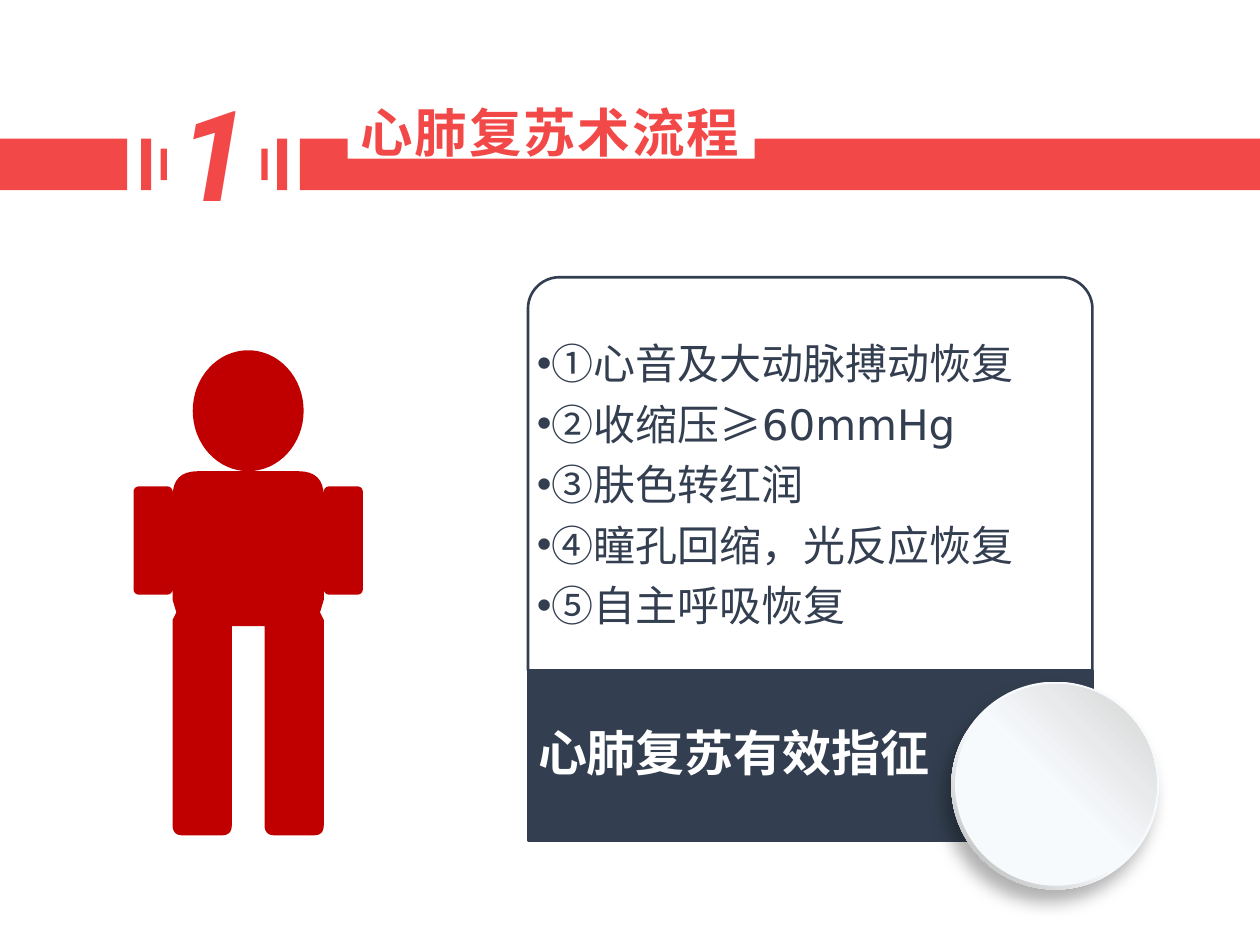
from math import cos, dist, pi, sin

from lxml.etree import SubElement
from pptx import Presentation
from pptx.dml.color import RGBColor
from pptx.enum.shapes import MSO_SHAPE as SHAPE
from pptx.enum.text import MSO_ANCHOR as ANCHOR, MSO_AUTO_SIZE as AUTO_SIZE, PP_ALIGN as ALIGN
from pptx.oxml import parse_xml
from pptx.oxml.ns import nsdecls, qn
from pptx.util import Inches, Pt

RED = RGBColor(0xF2, 0x48, 0x48)
DARK_RED = RGBColor(0xC0, 0x00, 0x00)
NAVY = RGBColor(0x33, 0x3F, 0x50)
WHITE = RGBColor(0xFF, 0xFF, 0xFF)

WIDTH, HEIGHT = 10, 7.5
BAND_TOP, BAND_HEIGHT = 1.1, 0.41
NUMBER_CENTER = 1.7
CARD_LEFT, CARD_TOP, CARD_WIDTH = 4.19, 2.2, 4.48
LIST_HEIGHT, LABEL_HEIGHT = 3.12, 1.35

SIGNS = [
    "①心音及大动脉搏动恢复",
    "②收缩压≥60mmHg",
    "③肤色转红润",
    "④瞳孔回缩，光反应恢复",
    "⑤自主呼吸恢复",
]

# Right half of the body: distance from the axis, height on the slide, corner radius
FIGURE_AXIS = 1.97
HALF_BODY = [
    (0.6, 3.74, 0.2), (0.6, 3.94, 0), (0.6, 3.86, 0.05),
    (0.91, 3.86, 0.05), (0.91, 4.72, 0.05), (0.6, 4.72, 0.05),
    (0.6, 4.66, 0), (0.6, 4.76, 0), (0.57, 4.86, 0), (0.6, 4.92, 0),
    (0.6, 6.63, 0.08), (0.13, 6.63, 0.08), (0.13, 4.97, 0),
]


def place(shape, left, top, width, height):
    shape.left, shape.top = Inches(left), Inches(top)
    shape.width, shape.height = Inches(width), Inches(height)


def add_shape(slide, kind, box, color=None, line=None):
    shape = slide.shapes.add_shape(kind, *map(Inches, box))
    shape.shadow.inherit = False
    if color is not None:
        shape.fill.solid()
        shape.fill.fore_color.rgb = color
    if line is None:
        shape.line.fill.background()
    else:
        shape.line.color.rgb = line
        shape.line.width = Pt(1.5)
    return shape


def set_frame(shape, anchor, insets):
    frame = shape.text_frame
    frame.word_wrap = True
    frame.auto_size = AUTO_SIZE.NONE
    frame.vertical_anchor = anchor
    (frame.margin_left, frame.margin_top,
     frame.margin_right, frame.margin_bottom) = map(Inches, insets)
    return frame


def set_font(paragraph, size, color, name="DejaVu Sans", bold=False, italic=False):
    paragraph.alignment = ALIGN.LEFT
    font = paragraph.font
    font.name, font.size = name, Pt(size)
    font.bold, font.italic = bold, italic
    font.color.rgb = color


def bring_to_front(slide, shape):
    slide.shapes._spTree.append(shape._element)


def add_banner(slide):
    add_shape(slide, SHAPE.RECTANGLE, (0, BAND_TOP, 1.01, BAND_HEIGHT), RED)
    add_shape(slide, SHAPE.RECTANGLE, (2.38, BAND_TOP, WIDTH - 2.38, BAND_HEIGHT), RED)
    add_shape(slide, SHAPE.RECTANGLE, (2.76, 0.63, 3.23, 0.63), WHITE)
    for offset, width, height in ((0.54, 0.08, BAND_HEIGHT), (0.4, 0.05, 0.25)):
        for side in (-1, 1):
            left = NUMBER_CENTER + side * offset - width / 2
            top = BAND_TOP + (BAND_HEIGHT - height) / 2
            add_shape(slide, SHAPE.RECTANGLE, (left, top, width, height), RED)

    number = slide.shapes.add_textbox(*map(Inches, (1.33, 0.55, 0.79, 1.31)))
    number.text_frame.word_wrap = False
    number.text_frame.text = "1"
    set_font(number.text_frame.paragraphs[0], 72, RED, "Roboto", bold=True, italic=True)


def add_title(slide, text):
    title = slide.shapes.title
    place(title, 2.76, 0.74, 3.23, 0.61)
    frame = set_frame(title, ANCHOR.TOP, (0.1, 0.05, 0, 0.05))
    frame.text = text
    paragraph = frame.paragraphs[0]
    set_font(paragraph, 30, RED, bold=True)
    paragraph.runs[0]._r.get_or_add_rPr().set("spc", "110")
    bring_to_front(slide, title)


def add_list_card(slide, items):
    box = (CARD_LEFT, CARD_TOP, CARD_WIDTH, LIST_HEIGHT)
    card = add_shape(slide, SHAPE.ROUND_2_SAME_RECTANGLE, box, WHITE, NAVY)
    card.adjustments[0] = 0.08

    body = slide.placeholders[1]
    place(body, *box)
    frame = set_frame(body, ANCHOR.MIDDLE, (0.07, 0.1, 0.07, 0.02))
    frame.text = "\n".join(items)
    for paragraph in frame.paragraphs:
        properties = paragraph._p.get_or_add_pPr()
        properties.set("marL", str(Inches(0.12)))
        properties.set("indent", str(-Inches(0.12)))
        SubElement(properties, qn("a:buChar")).set("char", "•")
        paragraph.level = 1
        paragraph.line_spacing = 1.2
        paragraph.space_before = Pt(0)
        set_font(paragraph, 24, NAVY)
    bring_to_front(slide, body)


def add_card_label(slide, text):
    box = (CARD_LEFT, CARD_TOP + LIST_HEIGHT, CARD_WIDTH, LABEL_HEIGHT)
    label = add_shape(slide, SHAPE.RECTANGLE, box, NAVY, NAVY)
    frame = set_frame(label, ANCHOR.MIDDLE, (0.08, 0, 0.8, 0))
    frame.text = text
    frame.paragraphs[0].line_spacing = 0.9
    set_font(frame.paragraphs[0], 28, WHITE, bold=True)


def add_gradient_disc(slide, box, stops, angle):
    disc = add_shape(slide, SHAPE.OVAL, box)
    stop_xml = "".join(
        f'<a:gs pos="{position * 1000}"><a:srgbClr val="{color}"/></a:gs>'
        for position, color in stops)
    disc._element.spPr.insert(2, parse_xml(
        f'<a:gradFill {nsdecls("a")} rotWithShape="1"><a:gsLst>{stop_xml}</a:gsLst>'
        f'<a:lin ang="{angle * 60000}" scaled="0"/></a:gradFill>'))
    return disc


def add_button(slide):
    rim = add_gradient_disc(slide, (7.55, 5.41, 1.65, 1.65),
                            [(57, "F7FAFD"), (92, "BFBFBF"), (100, "A6A6A6")], 135)
    rim._element.spPr.find(qn("a:effectLst")).append(parse_xml(
        f'<a:outerShdw {nsdecls("a")} blurRad="{Pt(10)}" dist="{Pt(8)}" dir="{120 * 60000}" '
        'algn="ctr" rotWithShape="0">'
        '<a:srgbClr val="000000"><a:alpha val="31000"/></a:srgbClr></a:outerShdw>'))
    add_gradient_disc(slide, (7.58, 5.43, 1.6, 1.6),
                      [(49, "F7FAFD"), (92, "D9D9D9"), (100, "BFBFBF")], 315)


def round_corners(corners, steps=8):
    """Return outline points with each corner replaced by a quadratic curve."""
    points = []
    for index, (x, y, radius) in enumerate(corners):
        if not radius:
            points.append((x, y))
            continue
        ends = []
        for near in (corners[index - 1], corners[(index + 1) % len(corners)]):
            share = radius / dist((x, y), near[:2])
            ends.append((x + (near[0] - x) * share, y + (near[1] - y) * share))
        for step in range(steps + 1):
            t = step / steps
            points.append(tuple(
                (1 - t) ** 2 * a + 2 * t * (1 - t) * b + t ** 2 * c
                for a, b, c in zip(ends[0], (x, y), ends[1])))
    return points


def add_person(slide):
    mirrored = [(-x, y, radius) for x, y, radius in reversed(HALF_BODY)]
    body = [(FIGURE_AXIS + x, y) for x, y in round_corners(HALF_BODY + mirrored)]
    turns = [2 * pi * step / 64 for step in range(64)]
    head = [(FIGURE_AXIS + 0.44 * cos(turn), 3.26 + 0.48 * sin(turn)) for turn in turns]

    body, head = ([(Inches(x), Inches(y)) for x, y in part] for part in (body, head))
    builder = slide.shapes.build_freeform(*body[0], scale=1.0)
    builder.add_line_segments(body[1:], close=True)
    builder.move_to(*head[0])
    builder.add_line_segments(head[1:], close=True)
    person = builder.convert_to_shape()
    person.shadow.inherit = False
    person.fill.solid()
    person.fill.fore_color.rgb = DARK_RED
    person.line.fill.background()


def main():
    presentation = Presentation()
    presentation.slide_width, presentation.slide_height = Inches(WIDTH), Inches(HEIGHT)
    slide = presentation.slides.add_slide(presentation.slide_layouts[1])
    add_list_card(slide, SIGNS)
    add_card_label(slide, "心肺复苏有效指征")
    add_button(slide)
    add_person(slide)
    add_banner(slide)
    add_title(slide, "心肺复苏术流程")
    presentation.save("out.pptx")


if __name__ == "__main__":
    main()
